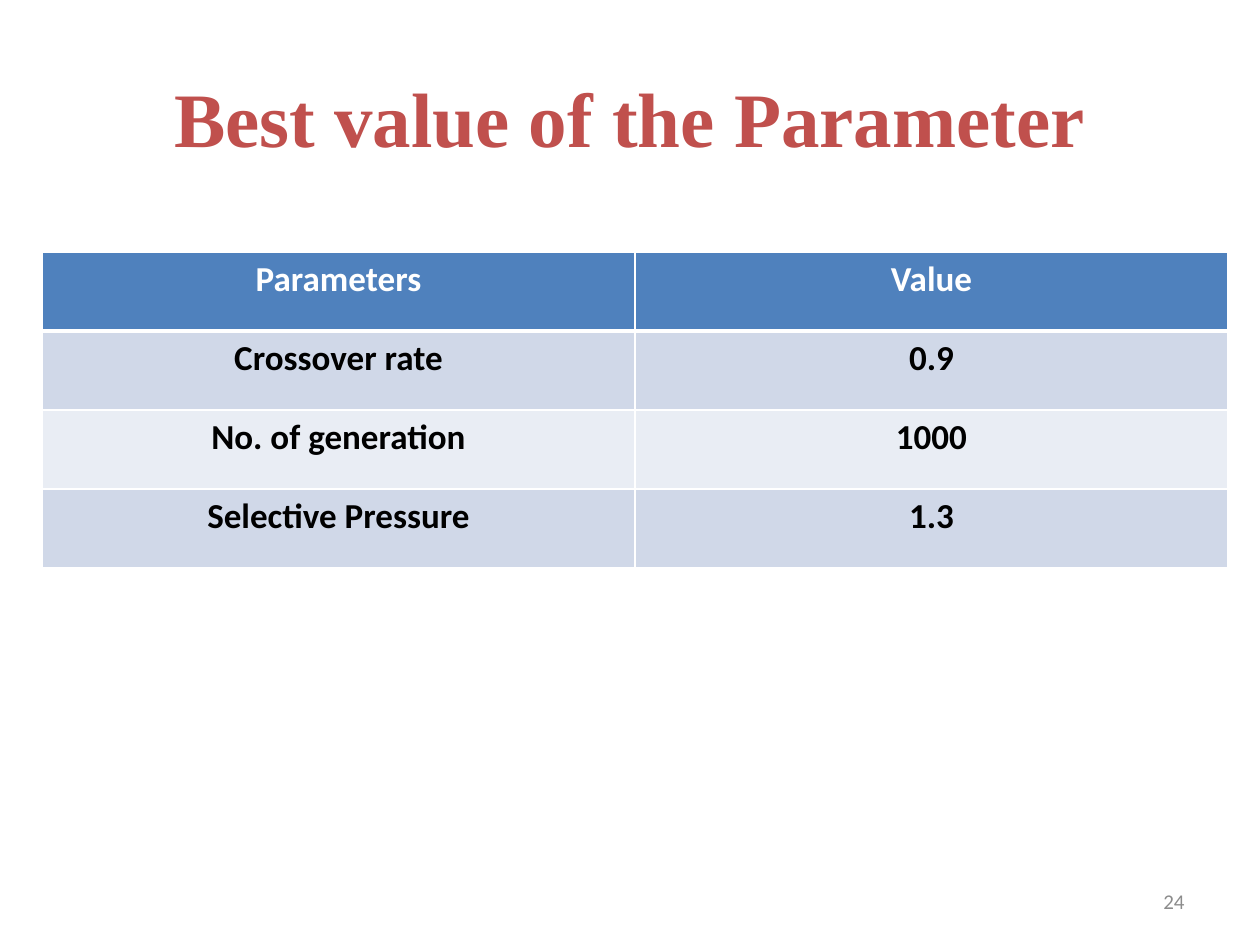
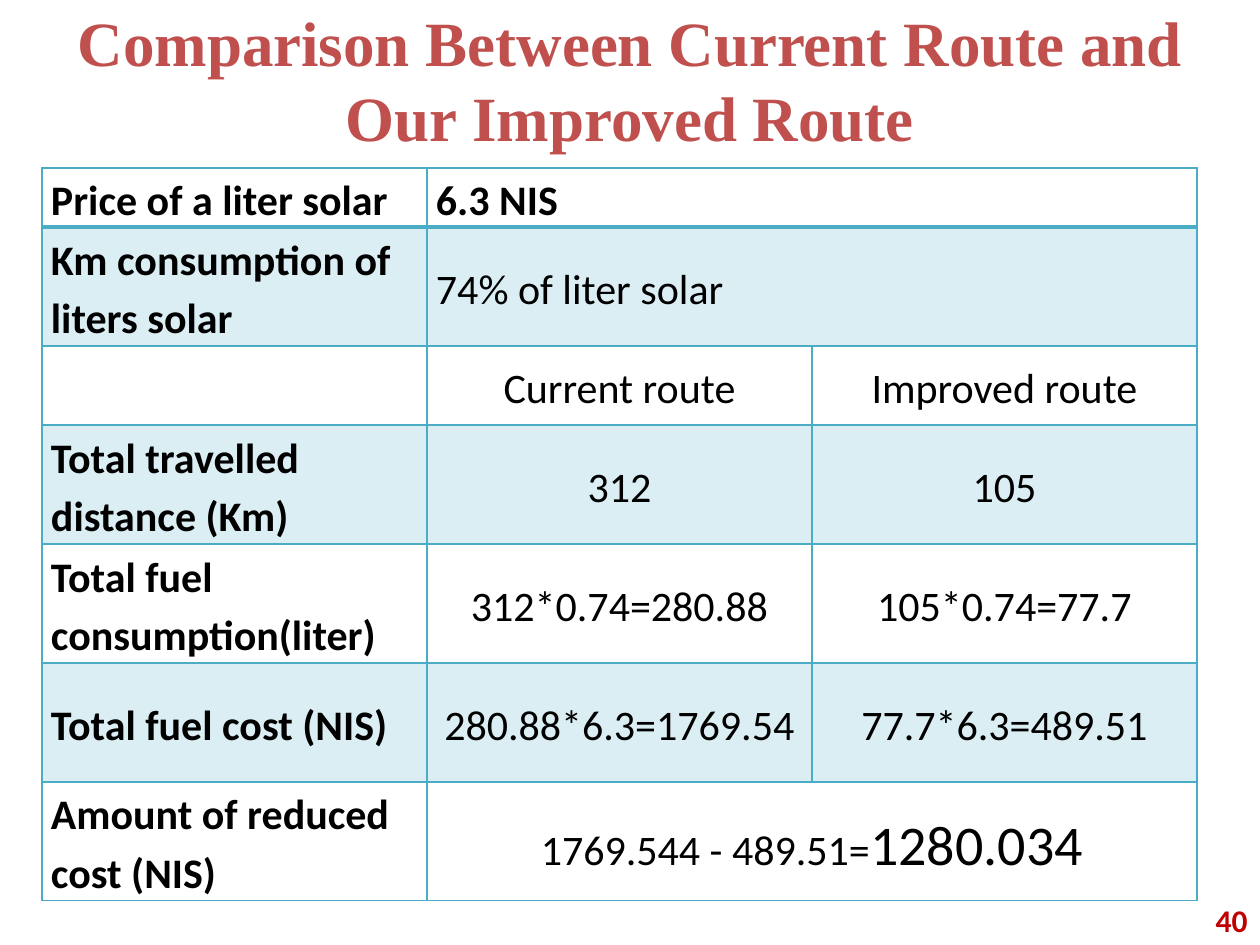
from dataclasses import dataclass

from lxml.etree import SubElement
from pptx import Presentation
from pptx.dml.color import RGBColor
from pptx.enum.text import MSO_ANCHOR as Anchor, MSO_AUTO_SIZE as AutoSize, PP_ALIGN as Align
from pptx.oxml.ns import qn
from pptx.util import Emu, Pt

EMU_PER_INCH = 914400
PX_PER_INCH = 126
TITLE_ONLY = 5
TITLE_FONT = "Times New Roman"
BODY_FONT = "Calibri"
COLORS = {
    "title": "C0504D",
    "header": "4F81BD",
    "band_dark": "D0D8E8",
    "band_light": "E9EDF4",
    "teal": "4BACC6",
    "white": "FFFFFF",
    "black": "000000",
    "muted": "8C8C8C",
    "number_red": "C00000",
}


@dataclass
class TableLook:
    border: str
    header_rule: int
    size: int
    anchor: Anchor
    margin_x: int
    margin_y: int
    spacing: float


PARAMETER_LOOK = TableLook("white", 3, 20, Anchor.TOP, 13, 6, 1.0)
ROUTE_LOOK = TableLook("teal", 2, 24, Anchor.MIDDLE, 9, 0, 1.15)

PARAMETERS = [
    ["Parameters", "Value"],
    ["Crossover rate", "0.9"],
    ["No. of generation", "1000"],
    ["Selective Pressure", "1.3"],
]
ROUTES = [
    ["Price of a liter solar", "6.3 NIS", ""],
    ["Km consumption of liters solar", "74% of liter solar", ""],
    ["", "Current route", "Improved route"],
    ["Total travelled distance (Km)", "312", "105"],
    ["Total fuel consumption(liter)", "312*0.74=280.88", "105*0.74=77.7"],
    ["Total fuel cost (NIS)", "280.88*6.3=1769.54", "77.7*6.3=489.51"],
    ["Amount of reduced cost (NIS)", "1769.544 - 489.51=", ""],
]


def px(length):
    return Emu(round(length * EMU_PER_INCH / PX_PER_INCH))


def rgb(color):
    return RGBColor.from_string(COLORS[color])


def add_run(paragraph, text, font, size, color, bold=False):
    run = paragraph.add_run()
    run.text = text
    run.font.name = font
    run.font.size = Pt(size)
    run.font.bold = bold
    run.font.color.rgb = rgb(color)


def add_titled_slide(prs, text, top, size):
    slide = prs.slides.add_slide(prs.slide_layouts[TITLE_ONLY])
    title = slide.shapes.title
    title.left, title.top, title.width, title.height = px(63), px(top), px(1134), px(158)
    frame = title.text_frame
    frame.auto_size = AutoSize.NONE
    frame.vertical_anchor = Anchor.MIDDLE
    paragraph = frame.paragraphs[0]
    paragraph.alignment = Align.CENTER
    add_run(paragraph, text, TITLE_FONT, size, "title", True)
    return slide


def add_page_number(slide, number, left, top, size, color, bold=False):
    frame = slide.shapes.add_textbox(px(left), px(top), px(294), px(50)).text_frame
    frame.word_wrap = True
    frame.vertical_anchor = Anchor.MIDDLE
    paragraph = frame.paragraphs[0]
    paragraph.alignment = Align.RIGHT
    add_run(paragraph, number, BODY_FONT, size, color, bold)


def set_borders(cell, color, top, bottom):
    properties = cell._tc.get_or_add_tcPr()
    for side, width in (("L", 1), ("R", 1), ("T", top), ("B", bottom)):
        line = SubElement(properties, qn(f"a:ln{side}"), w=str(Pt(width)))
        fill = SubElement(line, qn("a:solidFill"))
        SubElement(fill, qn("a:srgbClr"), val=COLORS[color])


def fill_cell(cell, color, opacity=100):
    if color is None:
        cell.fill.background()
        return
    cell.fill.solid()
    cell.fill.fore_color.rgb = rgb(color)
    if opacity < 100:
        tint = cell._tc.tcPr.find(qn("a:solidFill")).find(qn("a:srgbClr"))
        SubElement(tint, qn("a:alpha"), val=str(opacity * 1000))


def write_cell(cell, text, look, color, bold, alignment):
    paragraph = cell.text_frame.paragraphs[0]
    paragraph.alignment = alignment
    paragraph.line_spacing = look.spacing
    if text:
        add_run(paragraph, text, BODY_FONT, look.size, color, bold)


def add_grid(slide, look, left, top, column_width, heights, columns):
    table = slide.shapes.add_table(len(heights), columns, px(left), px(top),
                                   px(column_width * columns), px(sum(heights))).table
    table.first_row = False
    table.horz_banding = False
    for column in table.columns:
        column.width = px(column_width)
    for index, (row, height) in enumerate(zip(table.rows, heights)):
        row.height = px(height)
        for cell in row.cells:
            cell.vertical_anchor = look.anchor
            cell.margin_left = cell.margin_right = px(look.margin_x)
            cell.margin_top = cell.margin_bottom = px(look.margin_y)
            set_borders(cell, look.border,
                        look.header_rule if index == 1 else 1,
                        look.header_rule if index == 0 else 1)
    return table


def add_parameter_table(slide):
    table = add_grid(slide, PARAMETER_LOOK, 42, 252, 593, [79] * len(PARAMETERS), 2)
    for r, row in enumerate(PARAMETERS):
        band = "header" if r == 0 else "band_dark" if r % 2 else "band_light"
        for c, text in enumerate(row):
            cell = table.cell(r, c)
            fill_cell(cell, band)
            write_cell(cell, text, PARAMETER_LOOK, "black" if r else "white", True, Align.CENTER)


def add_route_table(slide):
    heights = [59, 119, 79] + [119] * 4
    table = add_grid(slide, ROUTE_LOOK, 42, 168, 385, heights, 3)
    for r, row in enumerate(ROUTES):
        for c, text in enumerate(row):
            cell = table.cell(r, c)
            fill_cell(cell, "teal" if r % 2 else None, 20)
            alignment = Align.CENTER if c and r > 1 else Align.LEFT
            write_cell(cell, text, ROUTE_LOOK, "black", r == 0 or c == 0, alignment)
    last = len(ROUTES) - 1
    for r in (0, 1, last):
        table.cell(r, 1).merge(table.cell(r, 2))
    saving = table.cell(last, 1).text_frame.paragraphs[0]
    add_run(saving, "1280.034", BODY_FONT, 32, "black")


def main():
    prs = Presentation()
    prs.slide_width, prs.slide_height = px(1260), px(945)

    parameters = add_titled_slide(prs, "Best value of the Parameter", 38, 44)
    add_parameter_table(parameters)
    add_page_number(parameters, "24", 903, 876, 12, "muted")

    comparison = add_titled_slide(
        prs, "Comparison Between Current Route and Our Improved Route", 0, 36)
    add_page_number(comparison, "40", 966, 895, 18, "number_red", True)
    add_route_table(comparison)

    prs.save("out.pptx")


if __name__ == "__main__":
    main()
